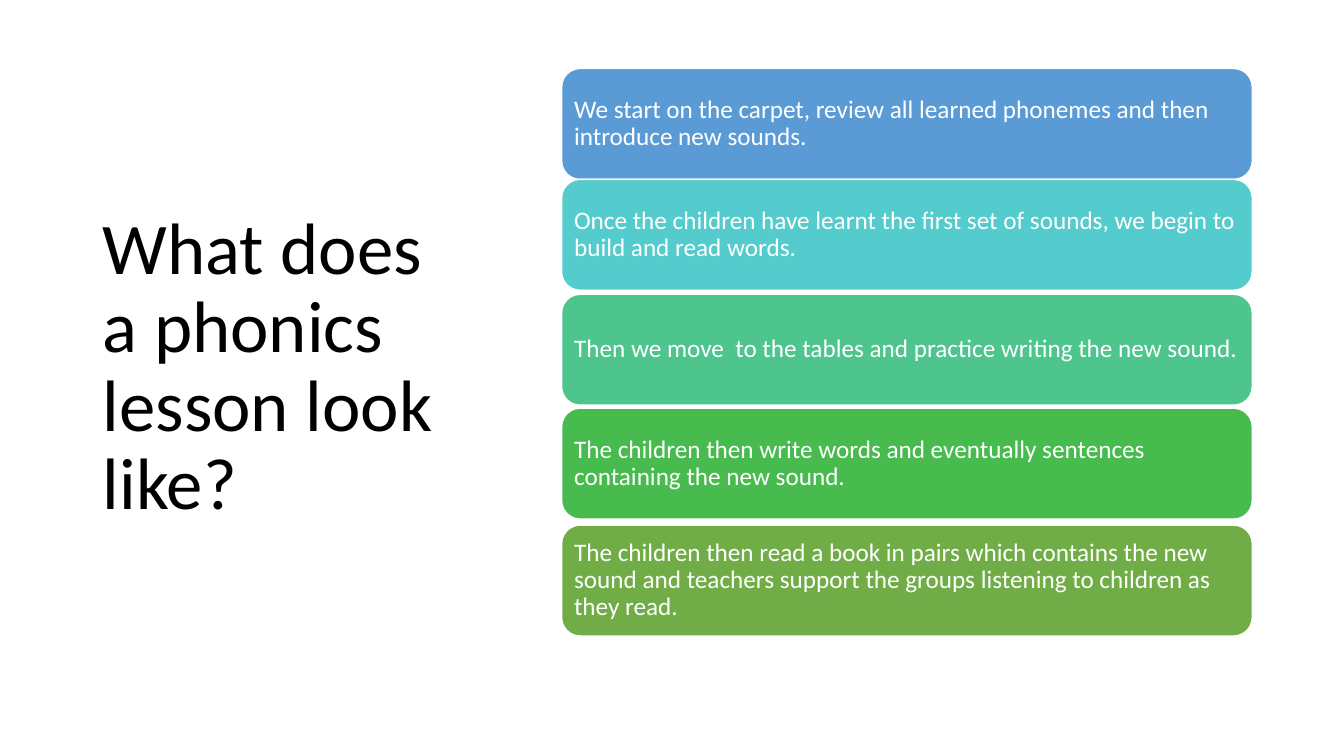
"""Build a slide that lists the five steps of a phonics lesson."""
from pptx import Presentation
from pptx.dml.color import RGBColor
from pptx.enum.shapes import MSO_SHAPE
from pptx.enum.text import MSO_ANCHOR, MSO_AUTO_SIZE, PP_ALIGN
from pptx.util import Inches, Pt

ROUNDED = MSO_SHAPE.ROUNDED_RECTANGLE
MIDDLE = MSO_ANCHOR.MIDDLE
LEFT = PP_ALIGN.LEFT
NO_FIT = MSO_AUTO_SIZE.NONE
TITLE_ONLY = 5
FONT = "Calibri"
COLORS = {
    "black": "000000",
    "white": "FFFFFF",
    "blue": "5B9BD5",
    "aqua": "54CCCD",
    "mint": "4DC58D",
    "green": "48BB4F",
    "olive": "70AD47",
}
STEPS = [
    (0.68, "blue", "We start on the carpet, review all learned phonemes and then "
                   "introduce new sounds."),
    (1.78, "aqua", "Once the children have learnt the first set of sounds, we begin "
                   "to build and read words."),
    (2.92, "mint", "Then we move  to the tables and practice writing the new sound."),
    (4.05, "green", "The children then write words and eventually sentences "
                    "containing the new sound."),
    (5.21, "olive", "The children then read a book in pairs which contains the new "
                    "sound and teachers support the groups listening to children as "
                    "they read."),
]


def rgb(name):
    """Return the named colour."""
    return RGBColor.from_string(COLORS[name])


def set_text(tf, text, size, color):
    """Fill a text frame with one left-aligned, vertically centred paragraph."""
    tf.text = text
    tf.word_wrap = True
    tf.auto_size = NO_FIT
    tf.vertical_anchor = MIDDLE
    p = tf.paragraphs[0]
    p.alignment = LEFT
    p.line_spacing = 0.9
    font = p.runs[0].font
    font.name = FONT
    font.size = Pt(size)
    font.color.rgb = rgb(color)


def add_title(s, text):
    """Place and format the slide title."""
    title = s.shapes.title
    title.left, title.top = Inches(0.92), Inches(0.61)
    title.width, title.height = Inches(3.69), Inches(6.09)
    set_text(title.text_frame, text, 52, "black")


def add_step(s, top, fill, text):
    """Add one rounded lesson step."""
    sp = s.shapes.add_shape(ROUNDED, Inches(5.57), Inches(top), Inches(6.85), Inches(1.1))
    sp.shadow.inherit = False
    sp.fill.solid()
    sp.fill.fore_color.rgb = rgb(fill)
    sp.line.color.rgb = rgb("white")
    sp.line.width = Pt(1)
    tf = sp.text_frame
    tf.margin_left = tf.margin_right = tf.margin_top = tf.margin_bottom = Inches(0.07)
    set_text(tf, text, 18, "white")


def main():
    """Build and save the slide."""
    prs = Presentation()
    prs.slide_width, prs.slide_height = Inches(13.33), Inches(7.5)
    s = prs.slides.add_slide(prs.slide_layouts[TITLE_ONLY])
    add_title(s, "What does a phonics lesson look like?")
    for top, fill, text in STEPS:
        add_step(s, top, fill, text)
    prs.save("out.pptx")


if __name__ == "__main__":
    main()
